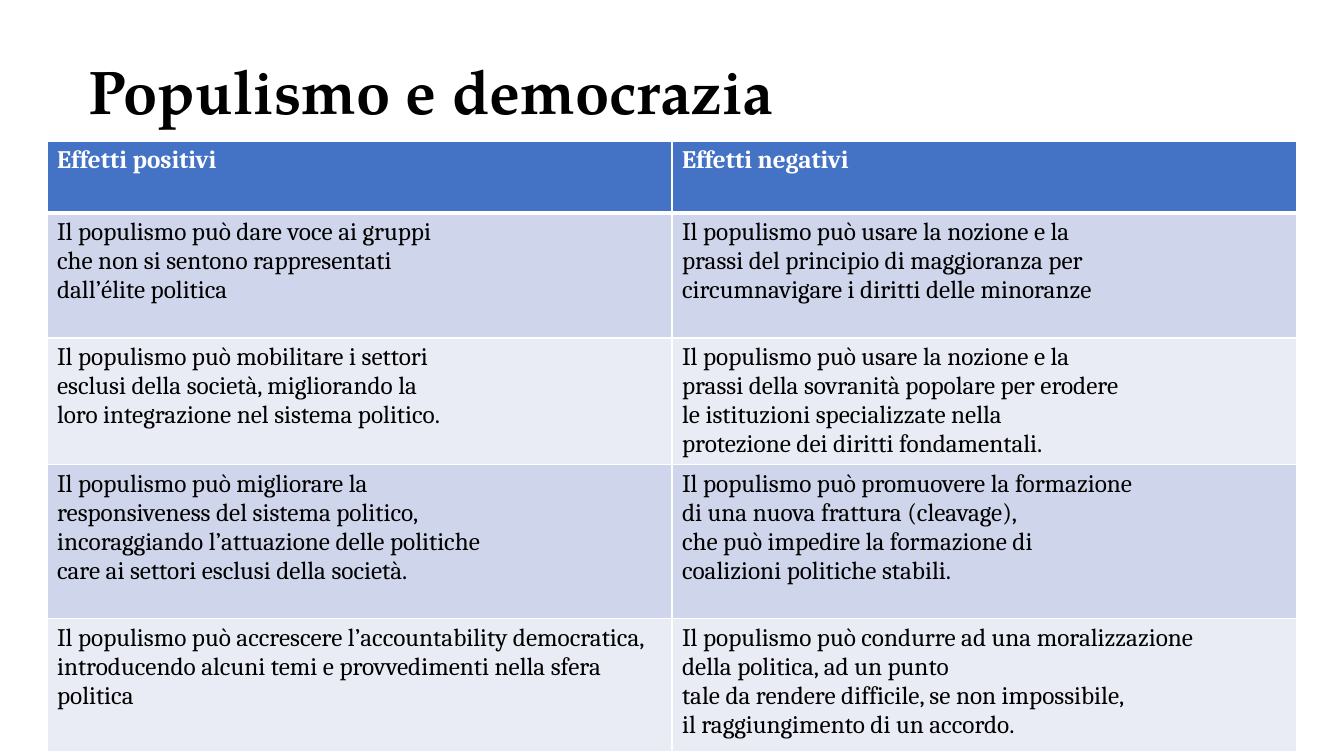
from dataclasses import dataclass

from lxml import etree
from pptx import Presentation
from pptx.dml.color import RGBColor
from pptx.enum.text import MSO_ANCHOR, PP_ALIGN
from pptx.oxml.ns import qn
from pptx.util import Pt

LEFT = PP_ALIGN.LEFT
TOP, MIDDLE = MSO_ANCHOR.TOP, MSO_ANCHOR.MIDDLE

# Content: each row holds two cells, each cell a list of paragraphs
TITLE = "Populismo e democrazia"
ROWS = [
    (["Effetti positivi"], ["Effetti negativi"]),
    (
        ["Il populismo può dare voce ai gruppi",
         "che non si sentono rappresentati",
         "dall’élite politica"],
        ["Il populismo può usare la nozione e la",
         "prassi del principio di maggioranza per",
         "circumnavigare i diritti delle minoranze"],
    ),
    (
        ["Il populismo può mobilitare i settori",
         "esclusi della società, migliorando la",
         "loro integrazione nel sistema politico."],
        ["Il populismo può usare la nozione e la",
         "prassi della sovranità popolare per erodere",
         "le istituzioni specializzate nella",
         "protezione dei diritti fondamentali."],
    ),
    (
        ["Il populismo può migliorare la",
         "responsiveness del sistema politico,",
         "incoraggiando l’attuazione delle politiche",
         "care ai settori esclusi della società."],
        ["Il populismo può promuovere la formazione",
         "di una nuova frattura (cleavage),",
         "che può impedire la formazione di",
         "coalizioni politiche stabili."],
    ),
    (
        ["Il populismo può accrescere l’accountability democratica, "
         "introducendo alcuni temi e provvedimenti nella sfera politica"],
        ["Il populismo può condurre ad una moralizzazione",
         "della politica, ad un punto",
         "tale da rendere difficile, se non impossibile,",
         "il raggiungimento di un accordo."],
    ),
]


@dataclass(frozen=True)
class Theme:
    title_font: str = "TeX Gyre Pagella"
    body_font: str = "Cambria"
    title_size: int = 44
    body_size: int = 18
    text: str = "000000"
    header_text: str = "FFFFFF"
    header_fill: str = "4472C4"
    band_fills: tuple = ("CFD5EA", "E9EBF5")
    border: str = "FFFFFF"


THEME = Theme()

# Layout in px
EMU_PER_PX = 914400 / 100.8
SLIDE_SIZE = (1344, 756)
TITLE_BOX = (78, 22, 1159, 146)
TABLE_LEFT, TABLE_TOP = 47, 141
COLUMN_WIDTH = 625
ROW_HEIGHTS = (72, 125, 126, 154, 133)


def px(length):
    return round(length * EMU_PER_PX)


def add_run(paragraph, text, font, size, color, bold):
    run = paragraph.add_run()
    run.text = text
    run.font.name = font
    run.font.size = Pt(size)
    run.font.bold = bold
    run.font.color.rgb = RGBColor.from_string(color)


def set_borders(cell, bottom_width):
    properties = cell._tc.get_or_add_tcPr()
    for side, width in (("L", 1), ("R", 1), ("T", 1), ("B", bottom_width)):
        line = etree.SubElement(properties, qn(f"a:ln{side}"), w=str(Pt(width)))
        fill = etree.SubElement(line, qn("a:solidFill"))
        etree.SubElement(fill, qn("a:srgbClr"), val=THEME.border)


def fill_cell(cell, lines, row_index):
    header = row_index == 0
    set_borders(cell, 3 if header else 1)
    cell.fill.solid()
    color = THEME.header_fill if header else THEME.band_fills[(row_index - 1) % 2]
    cell.fill.fore_color.rgb = RGBColor.from_string(color)
    cell.vertical_anchor = TOP
    frame = cell.text_frame
    for index, line in enumerate(lines):
        paragraph = frame.add_paragraph() if index else frame.paragraphs[0]
        add_run(paragraph, line, THEME.body_font, THEME.body_size,
                THEME.header_text if header else THEME.text, header)


def add_title(slide):
    title = slide.shapes.title
    title.left, title.top, title.width, title.height = map(px, TITLE_BOX)
    title.text_frame.vertical_anchor = MIDDLE
    paragraph = title.text_frame.paragraphs[0]
    paragraph.alignment = LEFT
    paragraph.line_spacing = 0.9
    add_run(paragraph, TITLE, THEME.title_font, THEME.title_size, THEME.text, True)


def add_effects_table(slide):
    column_count = len(ROWS[0])
    table = slide.shapes.add_table(
        len(ROWS), column_count, px(TABLE_LEFT), px(TABLE_TOP),
        px(COLUMN_WIDTH * column_count), px(sum(ROW_HEIGHTS))).table
    for column in table.columns:
        column.width = px(COLUMN_WIDTH)
    for row_index, (cells, height) in enumerate(zip(ROWS, ROW_HEIGHTS)):
        table.rows[row_index].height = px(height)
        for column_index, lines in enumerate(cells):
            fill_cell(table.cell(row_index, column_index), lines, row_index)


def main():
    presentation = Presentation()
    presentation.slide_width, presentation.slide_height = map(px, SLIDE_SIZE)
    slide = presentation.slides.add_slide(presentation.slide_layouts[5])
    add_title(slide)
    add_effects_table(slide)
    presentation.save("out.pptx")


if __name__ == "__main__":
    main()
